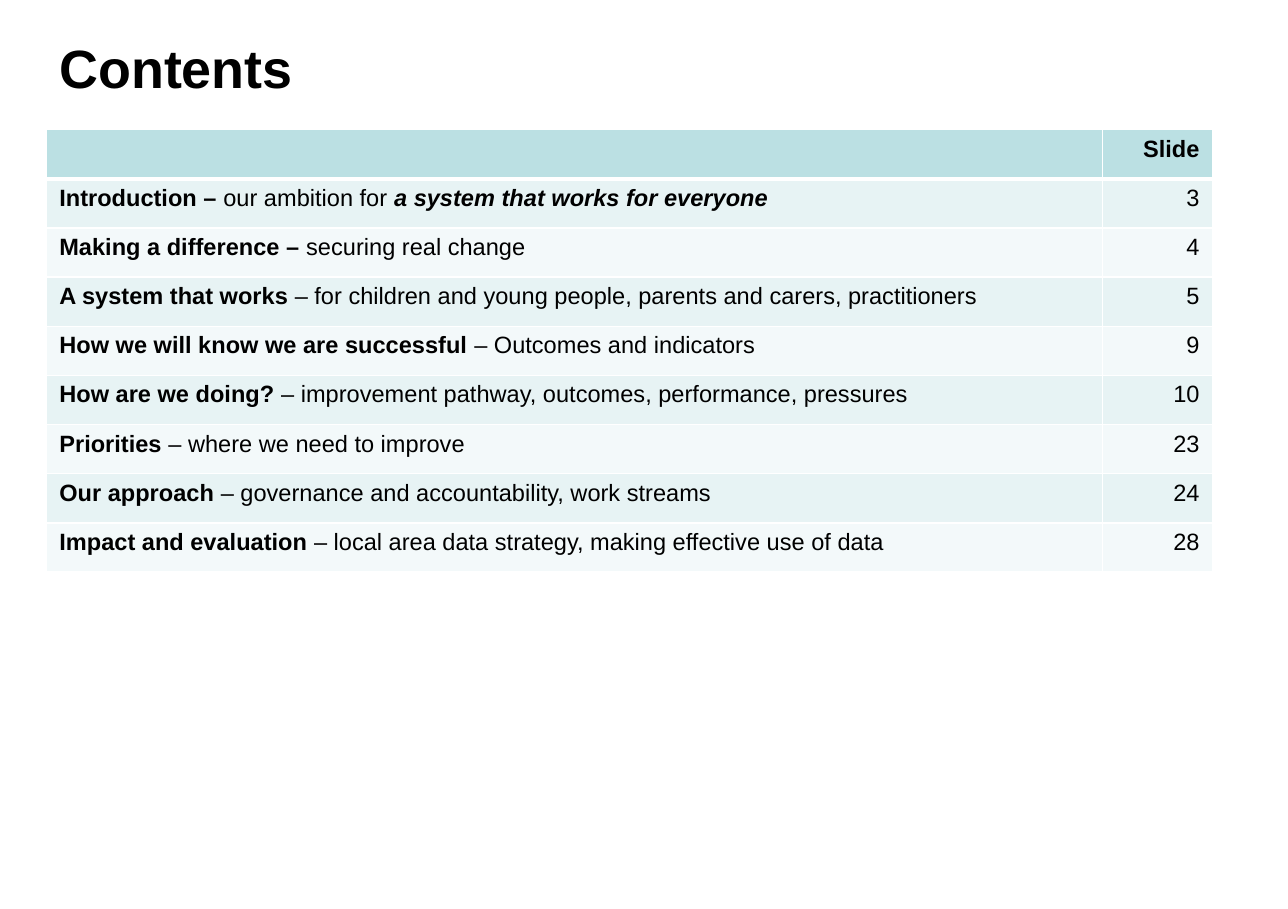
from pptx import Presentation
from pptx.dml.color import RGBColor
from pptx.enum.text import MSO_ANCHOR as Anchor, PP_ALIGN as Align
from pptx.oxml import parse_xml
from pptx.oxml.ns import nsdecls
from pptx.util import Inches, Pt


def rgb(value):
    return RGBColor.from_string(value)


def add_run(p, text, size, bold=False, italic=False):
    r = p.add_run()
    r.text = text
    r.font.name = "Arial"
    r.font.size = Pt(size)
    r.font.bold = bold
    r.font.italic = italic
    r.font.color.rgb = rgb("000000")


HEADER, BANDS, BORDER = "BBE0E3", ("F3F9FA", "E7F3F4"), "FFFFFF"
ROWS = [
    ([], "Slide"),
    ([("Introduction – ", True), ("our ambition for ", False),
      ("a system that works for everyone", True, True)], "3"),
    ([("Making a difference – ", True), ("securing real change", False)], "4"),
    ([("A system that works ", True),
      ("– for children and young people, parents and carers, practitioners", False)], "5"),
    ([("How we will know we are successful ", True),
      ("– Outcomes and indicators", False)], "9"),
    ([("How are we doing? ", True),
      ("– improvement pathway, outcomes, performance, pressures", False)], "10"),
    ([("Priorities ", True), ("– where we need to improve", False)], "23"),
    ([("Our approach ", True),
      ("– governance and accountability, work streams", False)], "24"),
    ([("Impact and evaluation ", True),
      ("– local area data strategy, making effective use of data", False)], "28"),
]

prs = Presentation()
prs.slide_width, prs.slide_height = Inches(10.63), Inches(7.5)
s = prs.slides.add_slide(prs.slide_layouts[5])

title = s.shapes.title
title.left, title.top = 0, Inches(0.18)
title.width, title.height = prs.slide_width, Inches(0.74)
tf = title.text_frame
tf.word_wrap = True
tf.vertical_anchor = Anchor.MIDDLE
tf.margin_left = Inches(0.49)
p = tf.paragraphs[0]
p.alignment = Align.LEFT
add_run(p, "Contents", 32, True)

table = s.shapes.add_table(len(ROWS), 2, Inches(0.38), Inches(1.07),
                           Inches(9.63), Inches(3.65)).table
table.columns[0].width = Inches(8.72)
table.columns[1].width = Inches(0.91)

for i, (topic, page) in enumerate(ROWS):
    fill = BANDS[i % 2] if i else HEADER
    for j, runs in enumerate((topic, [(page, i == 0)])):
        cell = table.cell(i, j)
        cell.margin_left = cell.margin_right = Inches(0.11)
        tc_pr = cell._tc.get_or_add_tcPr()
        for side in "LRTB":
            heavy = (i, side) in ((0, "B"), (1, "T"))
            tc_pr.append(parse_xml(
                f'<a:ln{side} {nsdecls("a")} w="{Pt(3 if heavy else 1)}"><a:solidFill>'
                f'<a:srgbClr val="{BORDER}"/></a:solidFill></a:ln{side}>'))
        cell.fill.solid()
        cell.fill.fore_color.rgb = rgb(fill)
        p = cell.text_frame.paragraphs[0]
        p.alignment = Align.RIGHT if j else Align.LEFT
        for run in runs:
            add_run(p, run[0], 14, *run[1:])

prs.save("out.pptx")
